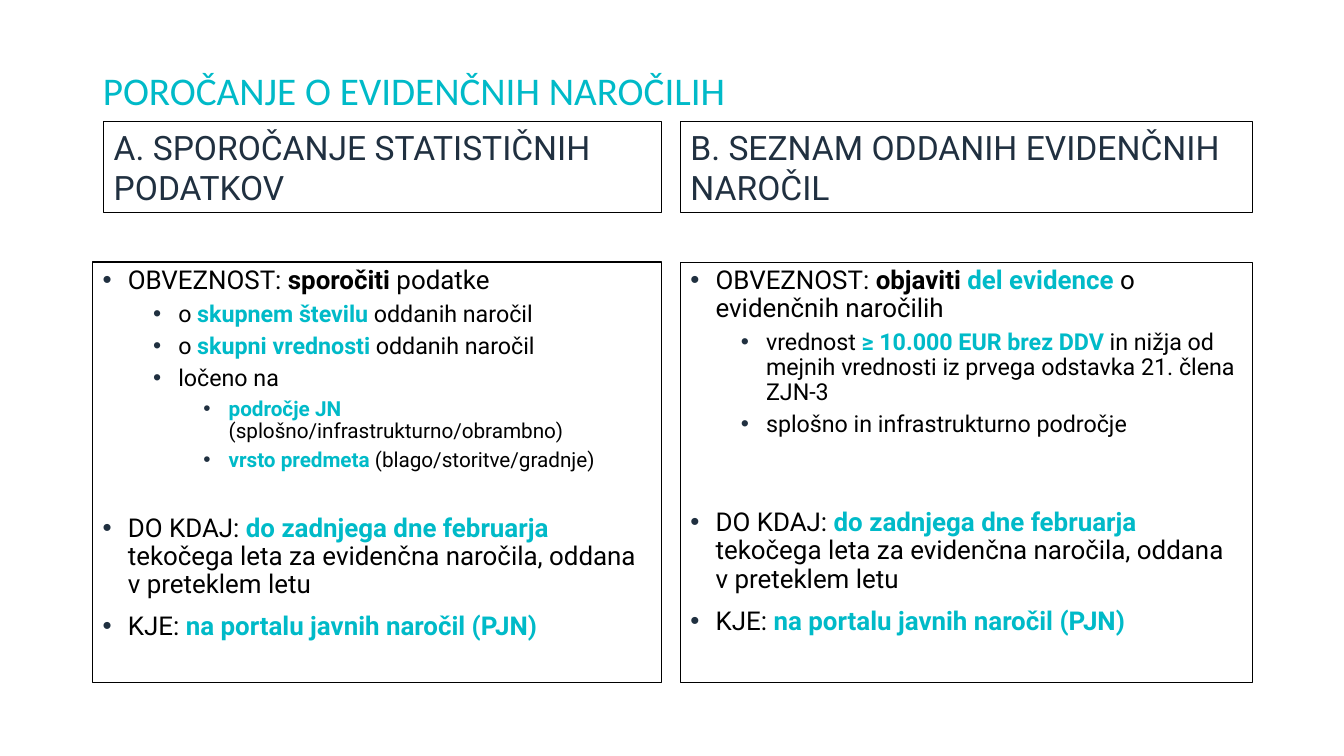
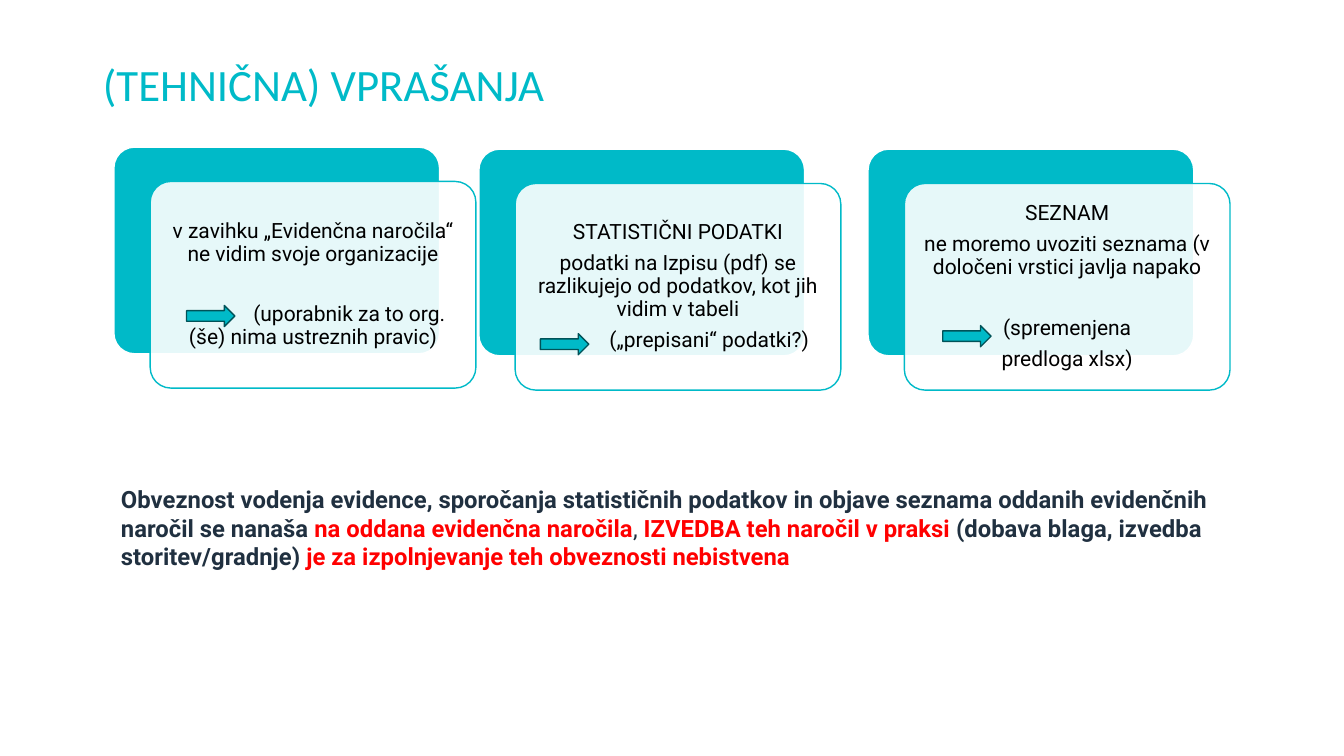
from lxml.etree import SubElement
from pptx import Presentation
from pptx.dml.color import RGBColor
from pptx.enum.shapes import MSO_SHAPE
from pptx.enum.text import MSO_ANCHOR, MSO_AUTO_SIZE, PP_ALIGN
from pptx.oxml.ns import qn
from pptx.util import Inches, Pt

RECT, ROUND, ARROW = (MSO_SHAPE.RECTANGLE, MSO_SHAPE.ROUNDED_RECTANGLE,
                      MSO_SHAPE.RIGHT_ARROW)
TOP, MIDDLE, BOTTOM = MSO_ANCHOR.TOP, MSO_ANCHOR.MIDDLE, MSO_ANCHOR.BOTTOM
LEFT, CENTER = PP_ALIGN.LEFT, PP_ALIGN.CENTER

# Shared look
TEAL, DEEP, NAVY = "00BAC8", "005258", "203040"
BLACK, WHITE, RED = "000000", "FFFFFF", "FF0000"
HEAD, BODY = "Calibri", "Roboto"
PLAIN, BOLD, KEY = (BLACK, False), (BLACK, True), (TEAL, True)

# Text size and space before, by list level
LEVELS = [(18.5, 10), (16.6, 5), (14.8, 5)]


def color(code):
    return RGBColor.from_string(code)


def set_font(font, size, code, name=BODY):
    font.name, font.size = name, Pt(size)
    font.color.rgb = color(code)


def add_runs(par, runs):
    """Write runs given as (text, (colour, bold))."""
    for text, (code, bold) in runs:
        run = par.add_run()
        run.text = text
        run.font.bold = bold
        run.font.color.rgb = color(code)


def add_bullet(par, level):
    props = par._p.get_or_add_pPr()
    props.set("marL", str(Inches(0.25 + 0.5 * level)))
    props.set("indent", str(-Inches(0.25)))
    tint = SubElement(props, qn("a:buClr"))
    SubElement(tint, qn("a:srgbClr"), val=NAVY)
    SubElement(props, qn("a:buFont"), typeface="Arial")
    SubElement(props, qn("a:buChar"), char="•")


def add_box(slide, kind, at, fill=None, line=BLACK, width=0.75):
    box = slide.shapes.add_shape(kind, *map(Inches, at))
    box.shadow.inherit = False
    if fill:
        box.fill.solid()
        box.fill.fore_color.rgb = color(fill)
    else:
        box.fill.background()
    box.line.color.rgb = color(line)
    box.line.width = Pt(width)
    return box


def set_frame(shape, anchor):
    frame = shape.text_frame
    frame.word_wrap = True
    frame.auto_size = MSO_AUTO_SIZE.NONE
    frame.vertical_anchor = anchor
    return frame


def next_par(frame, index):
    return frame.add_paragraph() if index else frame.paragraphs[0]


def add_slide(deck, title, size, height):
    slide = deck.slides.add_slide(deck.slide_layouts[5])
    shape = slide.shapes.title
    shape.left, shape.top = Inches(0.92), Inches(0.4)
    shape.width, shape.height = Inches(11.5), Inches(height)
    par = set_frame(shape, BOTTOM).paragraphs[0]
    par.text = title
    par.alignment = LEFT
    par.line_spacing = 0.9
    set_font(par.font, size, TEAL, HEAD)
    return slide


def add_head(slide, left, width, text):
    box = add_box(slide, RECT, (left, 1.21, width, 0.9))
    par = set_frame(box, BOTTOM).paragraphs[0]
    par.text = text
    par.alignment = LEFT
    set_font(par.font, 24, NAVY)


def add_list(slide, left, width, items, line):
    """Items are (level, extra space before, runs)."""
    box = add_box(slide, RECT, (left, 2.6, width, 4.17), width=line)
    frame = set_frame(box, TOP)
    for i, (level, extra, runs) in enumerate(items):
        size, gap = LEVELS[level]
        par = next_par(frame, i)
        par.level = level
        par.alignment = LEFT
        par.line_spacing = 0.9
        par.space_before = Pt(gap + extra if i else 0)
        add_bullet(par, level)
        set_font(par.font, size, BLACK)
        add_runs(par, runs)


def add_card(slide, left, top, items):
    """Items are (text, space before, first-line indent)."""
    back = add_box(slide, ROUND, (left, top, 3.23, 2.05), TEAL, WHITE, 1)
    front = add_box(slide, ROUND, (left + 0.36, top + 0.34, 3.23, 2.05),
                    WHITE, TEAL, 1)
    for panel in (back, front):
        panel.adjustments[0] = 0.1
    tint = front.fill._xPr.find(qn("a:solidFill"))[0]
    SubElement(tint, qn("a:alpha"), val="90000")
    frame = set_frame(front, MIDDLE)
    frame.margin_left = frame.margin_right = Inches(0.06)
    frame.margin_top = frame.margin_bottom = Inches(0.06)
    for i, (text, gap, indent) in enumerate(items):
        par = next_par(frame, i)
        par.text = text
        par.alignment = CENTER
        par.line_spacing = 0.9
        par.space_before, par.space_after = Pt(gap), Pt(6)
        if indent:
            par._p.get_or_add_pPr().set("indent", str(Inches(indent)))
        set_font(par.font, 15, BLACK)


def add_note(slide, runs):
    box = slide.shapes.add_textbox(*map(Inches, (1.04, 4.76, 11.37, 1.18)))
    frame = set_frame(box, TOP)
    frame.margin_left = Inches(0.16)
    par = frame.paragraphs[0]
    set_font(par.font, 17, NAVY)
    add_runs(par, runs)


def closing(extra):
    """Deadline and place, the same in both lists."""
    return [
        (0, extra, [("DO KDAJ: ", PLAIN), ("do zadnjega dne februarja ", KEY),
                    ("tekočega leta za evidenčna naročila, oddana "
                     "v preteklem letu", PLAIN)]),
        (0, 0, [("KJE: ", PLAIN), ("na portalu javnih naročil (PJN)", KEY)]),
    ]


def report_slide(deck):
    slide = add_slide(deck, "POROČANJE O EVIDENČNIH NAROČILIH", 28, 0.78)
    # Left column
    add_head(slide, 1.03, 5.53, "A. SPOROČANJE STATISTIČNIH PODATKOV")
    add_list(slide, 0.92, 5.64, [
        (0, 0, [("OBVEZNOST: ", PLAIN), ("sporočiti", BOLD),
                (" podatke", PLAIN)]),
        (1, 0, [("o ", PLAIN), ("skupnem številu ", KEY),
                ("oddanih naročil", PLAIN)]),
        (1, 0, [("o ", PLAIN), ("skupni vrednosti ", KEY),
                ("oddanih naročil", PLAIN)]),
        (1, 0, [("ločeno na", PLAIN)]),
        (2, 0, [("področje JN ", KEY),
                ("(splošno/infrastrukturno/obrambno)", PLAIN)]),
        (2, 0, [("vrsto predmeta ", KEY),
                ("(blago/storitve/gradnje)", PLAIN)]),
    ] + closing(20.6), 1)
    # Right column
    add_head(slide, 6.75, 5.67, "B. SEZNAM ODDANIH EVIDENČNIH NAROČIL")
    add_list(slide, 6.75, 5.67, [
        (0, 0, [("OBVEZNOST: ", PLAIN), ("objaviti ", BOLD),
                ("del evidence ", KEY), ("o evidenčnih naročilih", PLAIN)]),
        (1, 0, [("vrednost ", PLAIN), ("≥ 10.000 EUR brez DDV ", KEY),
                ("in nižja od mejnih vrednosti iz prvega odstavka "
                 "21. člena ZJN-3", PLAIN)]),
        (1, 0, [("splošno in infrastrukturno področje", PLAIN)]),
    ] + closing(41.5), 0.75)


def question_slide(deck):
    slide = add_slide(deck, "(TEHNIČNA) VPRAŠANJA", 32, 0.75)
    # Cards
    add_card(slide, 1.13, 1.46, [
        ("v zavihku „Evidenčna naročila“ ne vidim svoje organizacije", 0, 0),
        ("(uporabnik za to org. (še) nima ustreznih pravic)", 21, 0.72),
    ])
    add_card(slide, 4.75, 1.48, [
        ("STATISTIČNI PODATKI", 0, 0),
        ("podatki na Izpisu (pdf) se razlikujejo od podatkov, "
         "kot jih vidim v tabeli", 0, 0),
        ("(„prepisani“ podatki?)", 0, 0.62),
    ])
    add_card(slide, 8.61, 1.48, [
        ("SEZNAM", 0, 0),
        ("ne moremo uvoziti seznama (v določeni vrstici javlja napako", 0, 0),
        ("(spremenjena", 21, 0),
        ("predloga xlsx)", 0, 0),
    ])
    # Arrows
    for left, top in [(1.85, 3.03), (5.36, 3.31), (9.35, 3.23)]:
        add_box(slide, ARROW, (left, top, 0.48, 0.21), TEAL, DEEP, 1)
    # Closing note
    add_note(slide, [
        ("Obveznost vodenja evidence, sporočanja statističnih podatkov in "
         "objave seznama oddanih evidenčnih naročil se nanaša ",
         (NAVY, True)),
        ("na oddana evidenčna naročila", (RED, True)),
        (", ", (NAVY, False)),
        ("IZVEDBA teh naročil v praksi ", (RED, True)),
        ("(dobava blaga, izvedba storitev/gradnje) ", (NAVY, True)),
        ("je za izpolnjevanje teh obveznosti nebistvena", (RED, True)),
    ])


def main():
    deck = Presentation()
    deck.slide_width, deck.slide_height = Inches(13.33), Inches(7.5)
    report_slide(deck)
    question_slide(deck)
    deck.save("out.pptx")


if __name__ == "__main__":
    main()
